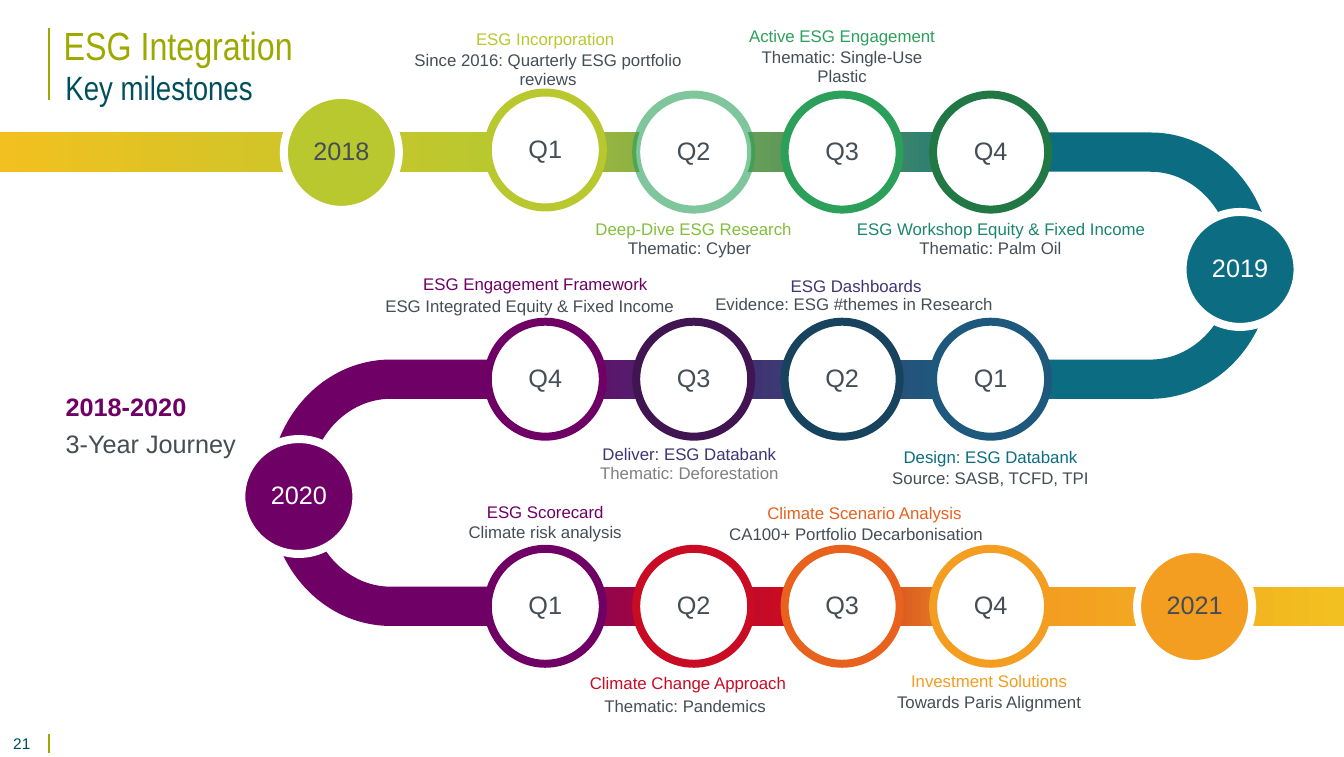
import math
from lxml import etree
from pptx import Presentation
from pptx.dml.color import RGBColor
from pptx.enum.shapes import MSO_CONNECTOR, MSO_SHAPE
from pptx.enum.text import MSO_ANCHOR, MSO_AUTO_SIZE, PP_ALIGN
from pptx.oxml.ns import qn
from pptx.util import Pt

OVAL, RECTANGLE = MSO_SHAPE.OVAL, MSO_SHAPE.RECTANGLE
STRAIGHT = MSO_CONNECTOR.STRAIGHT
TOP, MIDDLE = MSO_ANCHOR.TOP, MSO_ANCHOR.MIDDLE
LEFT, CENTER = PP_ALIGN.LEFT, PP_ALIGN.CENTER
NO_AUTOFIT = MSO_AUTO_SIZE.NONE

SLIDE_W, SLIDE_H = 958.32, 540
GREY, WHITE, OLIVE, DARK_TEAL = "454D55", "FFFFFF", "9EA900", "004F5C"
LIME, GREEN, TEAL, PURPLE = "BAC82F", "2CA05B", "0C6D82", "6F0066"
RED, ORANGE, AMBER, YELLOW = "C90B24", "E8611D", "F39D21", "F2C020"
INDIGO = "403474"

ROW_Y = [108.5 + 162 * row for row in range(3)]
COLUMN_X = [388.8 + 105.84 * column for column in range(4)]
DIAMETER, RING, BAND = 82, 5.7, 28
TRACK_LEFT, TRACK_RIGHT = 347.8, 747.4
BEND_RUN, BEND_RADIUS = 73, 72.7
CAPTION_W, CAPTION_H = 236, 16

# row, left, right, colour stops
BANDS = [
    (0, TRACK_LEFT, TRACK_RIGHT, [(0, LIME), (100, TEAL)]),
    (0, 0, TRACK_LEFT, [(0, YELLOW), (100, LIME)]),
    (1, TRACK_LEFT, TRACK_RIGHT, [(0, PURPLE), (100, TEAL)]),
    (2, TRACK_LEFT, TRACK_RIGHT, [(0, PURPLE), (52, RED), (100, YELLOW)]),
    (2, 743.8, SLIDE_W, [(0, AMBER), (100, YELLOW)]),
]
BENDS = [(1, 351.4, -1, PURPLE), (0, TRACK_RIGHT, 1, TEAL)]
YEARS = [
    ("2018", 243.4, 108.7, LIME, GREY),
    ("2019", 884.2, 192.2, TEAL, WHITE),
    ("2020", 213.1, 354.2, PURPLE, WHITE),
    ("2021", 851.8, 432.7, AMBER, GREY),
]
QUARTERS = [
    [("Q1", LIME), ("Q2", GREEN), ("Q3", GREEN), ("Q4", "217844")],
    [("Q4", PURPLE), ("Q3", "411452"), ("Q2", "17435E"), ("Q1", "1E597D")],
    [("Q1", PURPLE), ("Q2", RED), ("Q3", ORANGE), ("Q4", AMBER)],
]
LIFTED, TRANSLUCENT = (0, 0), (0, 1)
CAPTIONS = [
    [("ESG Incorporation", LIME, 0, 22.3),
     ("Since 2016: Quarterly ESG portfolio reviews", GREY, 2, 37.4, 206),
     ("ESG Engagement Framework", PURPLE, -7, 196.6),
     ("ESG Integrated Equity & Fixed Income", GREY, -11, 212.4),
     ("ESG Scorecard", PURPLE, 0, 359.3),
     ("Climate risk analysis", GREY, 0, 373.7)],
    [("Deep-Dive ESG Research", "81BF3B", 0, 157.7),
     ("Thematic: Cyber", GREY, -3, 171.4),
     ("Deliver: ESG Databank", INDIGO, -3, 318.2),
     ("Thematic: Deforestation", "808080", -3, 331.9),
     ("Climate Change Approach", RED, -4, 481.7),
     ("Thematic: Pandemics", GREY, -6, 498.2)],
    [("Active ESG Engagement", GREEN, 0, 20.2),
     ("Thematic: Single-Use Plastic", GREY, 0, 35.3, 136),
     ("ESG Dashboards", INDIGO, 10, 198),
     ("Evidence: ESG #themes in Research", GREY, 8.6, 211),
     ("Climate Scenario Analysis", ORANGE, 16, 360),
     ("CA100+ Portfolio Decarbonisation", GREY, 10, 375.1)],
    [("ESG Workshop Equity & Fixed Income", "1B866F", 7.6, 157.7),
     ("Thematic: Palm Oil", GREY, 0, 171.4),
     ("Design: ESG Databank", TEAL, 0, 320.4),
     ("Source: SASB, TCFD, TPI", GREY, 0, 335.5),
     ("Investment Solutions", AMBER, -1, 480.2),
     ("Towards Paris Alignment", GREY, -1, 495.4)],
]


def rgb(colour):
    return RGBColor.from_string(colour)


def write(shape, text, size, colour, align=LEFT, anchor=TOP, insets=(0, 0),
          font="Arial", spacing=0.9, bold=False):
    frame = shape.text_frame
    frame.text = text
    frame.word_wrap = True
    frame.auto_size = NO_AUTOFIT
    frame.vertical_anchor = anchor
    frame.margin_left = frame.margin_right = Pt(insets[0])
    frame.margin_top = frame.margin_bottom = Pt(insets[1])
    paragraph = frame.paragraphs[0]
    paragraph.alignment = align
    paragraph.line_spacing = spacing
    face = paragraph.runs[0].font
    face.name, face.size, face.bold = font, Pt(size), bold
    face.color.rgb = rgb(colour)


def add_text(x, y, w, h, *args, **style):
    write(shapes.add_textbox(Pt(x), Pt(y), Pt(w), Pt(h)), *args, **style)


def add_rule(x, top, bottom):
    rule = shapes.add_connector(STRAIGHT, Pt(x), Pt(top), Pt(x), Pt(bottom))
    rule.line.color.rgb = rgb(OLIVE)
    rule.line.width = Pt(1.5)
    etree.SubElement(rule._element.spPr, qn("a:effectLst"))


def add_bend(row, start, side, colour):
    top, bottom = ROW_Y[row], ROW_Y[row + 1]
    hub, middle, half = start + side * BEND_RUN, (top + bottom) / 2, (bottom - top) / 2
    angles = [math.pi * step / 60 for step in range(61)]
    arc = [(hub + side * BEND_RADIUS * math.sin(a), middle - half * math.cos(a))
           for a in angles]
    builder = shapes.build_freeform(Pt(start), Pt(top))
    builder.add_line_segments(
        [(Pt(x), Pt(y)) for x, y in arc + [(start, bottom)]], close=False)
    bend = builder.convert_to_shape()
    bend.shadow.inherit = False
    bend.fill.background()
    bend.line.color.rgb = rgb(colour)
    bend.line.width = Pt(BAND)


def add_band(row, left, right, stops):
    band = shapes.add_shape(RECTANGLE, Pt(left), Pt(ROW_Y[row] - BAND / 2),
                            Pt(right - left), Pt(BAND))
    band.shadow.inherit = False
    band.line.fill.background()
    band.fill.gradient()
    band.fill.gradient_angle = 0
    stop_list = band._element.spPr.find(qn("a:gradFill")).find(qn("a:gsLst"))
    stop_list.clear()
    for position, colour in stops:
        stop = etree.SubElement(stop_list, qn("a:gs"), pos=str(position * 1000))
        etree.SubElement(stop, qn("a:srgbClr"), val=colour)


def add_circle(x, y, text, fill, ring, colour):
    circle = shapes.add_shape(OVAL, Pt(x - DIAMETER / 2), Pt(y - DIAMETER / 2),
                              Pt(DIAMETER), Pt(DIAMETER))
    circle.shadow.inherit = False
    circle.fill.solid()
    circle.fill.fore_color.rgb = rgb(fill)
    circle.line.color.rgb = rgb(ring)
    circle.line.width = Pt(RING)
    write(circle, text, 18, colour, CENTER, MIDDLE)
    return circle


prs = Presentation()
prs.slide_width, prs.slide_height = Pt(SLIDE_W), Pt(SLIDE_H)
slide = prs.slides.add_slide(prs.slide_layouts[5])
shapes = slide.shapes

title = shapes.title
title.left, title.top, title.width, title.height = Pt(36), Pt(0), Pt(890), Pt(64)
write(title, "ESG Integration", 28, OLIVE, anchor=MIDDLE, insets=(9.4, 5),
      font="Arial Narrow", spacing=1)
add_text(39.6, 44, 890, 36, "Key milestones", 24, DARK_TEAL, insets=(7.2, 3.6),
         font="Arial Narrow", spacing=1)
add_text(0, 518.4, 184, 15, "21", 11, DARK_TEAL, insets=(9.4, 5), spacing=1)
add_rule(35, 20, 71)
add_rule(35, 523.5, 537)

for bend in BENDS:
    add_bend(*bend)
for band in BANDS:
    add_band(*band)

add_text(46.8, 281.5, 136, 23, "2018-2020", 18, PURPLE, bold=True)
add_text(46.8, 308.2, 136, 30, "3-Year Journey", 18, GREY)

for year, x, y, fill, colour in YEARS:
    add_circle(x, y, year, fill, WHITE, colour)

for row, quarters in enumerate(QUARTERS):
    for column, (quarter, ring) in enumerate(quarters):
        lift = 1.5 if (row, column) == LIFTED else 0
        circle = add_circle(COLUMN_X[column], ROW_Y[row] - lift, quarter, WHITE, ring, GREY)
        if (row, column) == TRANSLUCENT:
            ring_colour = circle._element.spPr.find(qn("a:ln")).find(".//" + qn("a:srgbClr"))
            etree.SubElement(ring_colour, qn("a:alpha"), val="60000")

for x, captions in zip(COLUMN_X, CAPTIONS):
    for text, colour, shift, y, *wrap in captions:
        width = wrap[0] if wrap else CAPTION_W
        add_text(x + shift - width / 2, y, width, CAPTION_H, text, 12, colour, CENTER)

prs.save("out.pptx")
